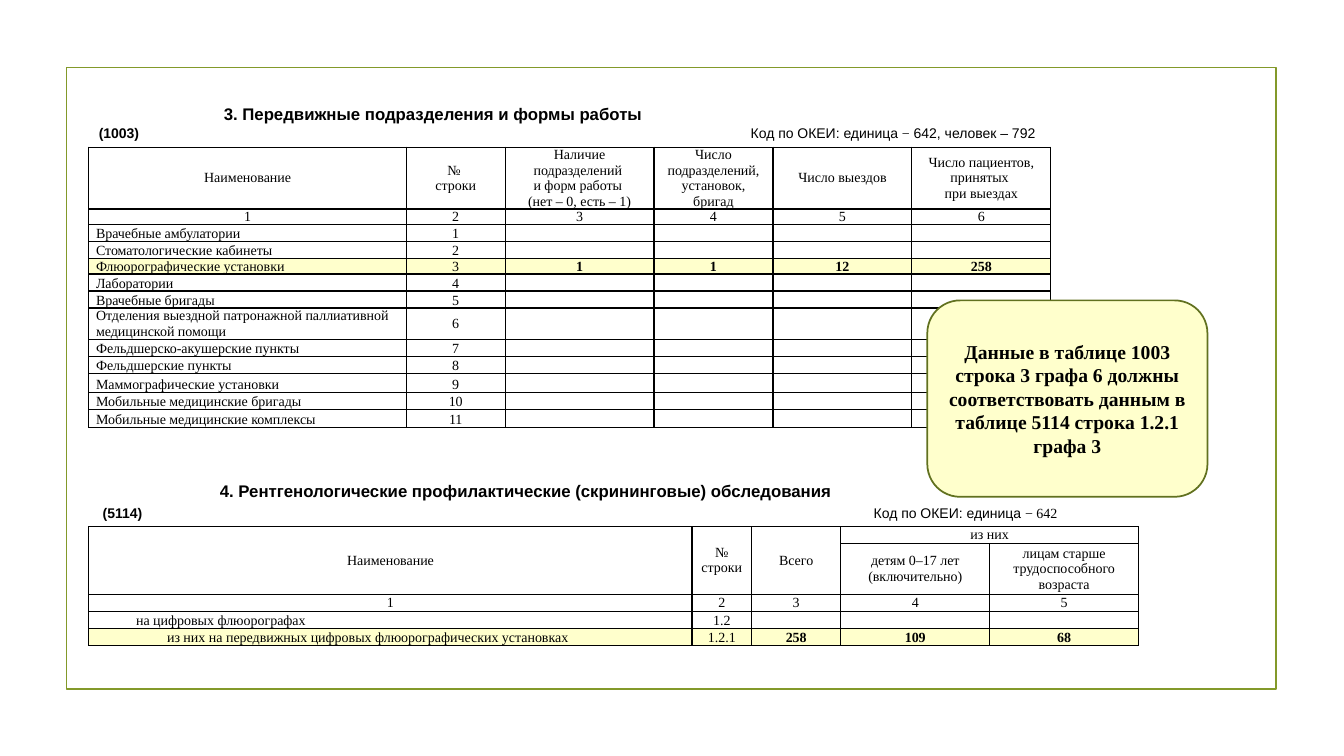
from lxml import etree
from pptx import Presentation
from pptx import util as u
from pptx.dml import color
from pptx.enum import shapes, text
from pptx.oxml import ns

COLORS = {"ink": "000000", "frame": "83992A", "highlight": "FFFFCC", "outline": "61711F"}
SERIF, SANS = "Times New Roman", "Arial"

UNITS = {
    "title": "3. Передвижные подразделения и формы работы",
    "code": "(1003)",
    "measure": [("Код по ОКЕИ: единица ", SANS), ("−", SERIF), (" 642, человек – 792", SANS)],
    "columns": [8, 2.49, 3.75, 3, 3.5, 3.5],
    "heights": [1.55] + [0.39] * 6 + [0.79, 0.39, 0.39, 0.47, 0.39, 0.47],
    "header": [["Наименование", "№ \vстроки",
                "Наличие подразделений \nи форм работы \n(нет – 0, есть – 1)",
                "Число\vподразделений, установок, бригад", "Число выездов",
                "Число пациентов, принятых \vпри выездах"]],
    "names": ["Врачебные амбулатории", "Стоматологические кабинеты",
              "Флюорографические установки", "Лаборатории", "Врачебные бригады",
              "Отделения выездной патронажной паллиативной медицинской помощи",
              "Фельдшерско-акушерские пункты", "Фельдшерские пункты",
              "Маммографические установки", "Мобильные медицинские бригады",
              "Мобильные медицинские комплексы"],
    "highlight": 4,
    "values": ["1", "1", "12", "258"],
}
SCREENING = {
    "title": "4. Рентгенологические профилактические (скрининговые) обследования",
    "code": "(5114)",
    "measure": [("Код по ОКЕИ: единица ", SANS), ("− 642", SERIF)],
    "columns": [15.2, 1.5, 2.25, 3.75, 3.75],
    "heights": [0.42, 1.28, 0.41, 0.43, 0.43],
    "header": [["Наименование", "№ строки", "Всего", "из них", ""],
               ["", "", "", "детям 0–17 лет\v(включительно)",
                "лицам старше трудоспособного возраста"]],
    "names": ["на цифровых флюорографах",
              "из них на передвижных цифровых флюорографических установках"],
    "numbers": ["1.2", "1.2.1"],
    "indents": [1.19, 1.97],
    "highlight": 4,
    "values": ["258", "109", "68"],
    "merges": [(0, 0, 1, 0), (0, 1, 1, 1), (0, 2, 1, 2), (0, 3, 0, 4)],
}


def rgb(name):
    """Return the named palette colour."""
    return color.RGBColor.from_string(COLORS[name])


def style_run(run, size, family, bold=False):
    """Give a run its size, typeface, weight and ink colour."""
    run.font.size, run.font.name, run.font.bold = u.Pt(size), family, bold
    run.font.color.rgb = rgb("ink")


def outline_cell(cell):
    """Draw a thin line on all four sides of a cell."""
    properties = cell._tc.get_or_add_tcPr()
    for side in ("lnL", "lnR", "lnT", "lnB"):
        line = etree.SubElement(properties, ns.qn(f"a:{side}"), w=str(u.Pt(1)))
        fill = etree.SubElement(line, ns.qn("a:solidFill"))
        etree.SubElement(fill, ns.qn("a:srgbClr"), val=COLORS["ink"])


def fill_cell(cell, words, centred, bold, highlighted, indent=0.18):
    """Write one table cell with its border, fill and text format."""
    outline_cell(cell)
    if highlighted:
        cell.fill.solid()
        cell.fill.fore_color.rgb = rgb("highlight")
    else:
        cell.fill.background()
    cell.margin_left, cell.margin_right = u.Cm(indent), u.Cm(0.18)
    cell.margin_top = cell.margin_bottom = 0
    cell.text_frame.text = words
    for paragraph in cell.text_frame.paragraphs:
        paragraph.alignment = text.PP_ALIGN.CENTER if centred else text.PP_ALIGN.LEFT
        for run in paragraph.runs:
            style_run(run, 10, SERIF, bold)
        if not words:
            etree.SubElement(paragraph._p, ns.qn("a:endParaRPr"), sz="1000")


def table_rows(data):
    """Join header, column numbers and body into full rows."""
    count = len(data["columns"])
    rows = data["header"] + [[str(number + 1) for number in range(count)]]
    numbers = data.get("numbers") or [str(i + 1) for i in range(len(data["names"]))]
    for name, number in zip(data["names"], numbers):
        marked = len(rows) == data["highlight"]
        rows = rows + [[name, number] + (data["values"] if marked else [""] * (count - 2))]
    return rows


def add_form_table(slide, data, left, top):
    """Place a reporting table with its top left corner at the given point."""
    rows, columns, heights = table_rows(data), data["columns"], data["heights"]
    table = slide.shapes.add_table(len(rows), len(columns), u.Cm(left), u.Cm(top),
                                   u.Cm(sum(columns)), u.Cm(sum(heights))).table
    table.first_row = table.horz_banding = False
    for column, width in zip(table.columns, columns):
        column.width = u.Cm(width)
    body = len(data["header"]) + 1
    indents = data.get("indents") or [0.18] * len(data["names"])
    for r, words in enumerate(rows):
        table.rows[r].height = u.Cm(heights[r])
        marked = r == data["highlight"]
        middle = r < body or heights[r] > 0.7
        for c, word in enumerate(words):
            cell = table.cell(r, c)
            label = r >= body and c == 0
            fill_cell(cell, word, not label, marked and c > 1, marked,
                      indents[r - body] if label else 0.18)
            cell.vertical_anchor = text.MSO_ANCHOR.MIDDLE if middle else text.MSO_ANCHOR.BOTTOM
    for top_row, first, bottom_row, last in data.get("merges", []):
        table.cell(top_row, first).merge(table.cell(bottom_row, last))


def add_caption(slide, data, left, top, width, height, title_indent, measure_tab, gap=0):
    """Place a table title above its code and unit of measure."""
    frame = slide.shapes.add_textbox(*map(u.Cm, (left, top, width, height))).text_frame
    frame.word_wrap = True
    frame.vertical_anchor = text.MSO_ANCHOR.MIDDLE
    title, details = frame.paragraphs[0], frame.add_paragraph()
    title.text = data["title"]
    title._p.get_or_add_pPr().set("marL", str(u.Cm(title_indent)))
    style_run(title.runs[0], 12, SANS, True)
    details.space_before = u.Pt(gap)
    tabs = etree.SubElement(details._p.get_or_add_pPr(), ns.qn("a:tabLst"))
    etree.SubElement(tabs, ns.qn("a:tab"), pos=str(u.Cm(measure_tab)), algn="l")
    details.text = data["code"] + "\t"
    for run in details.runs:
        style_run(run, 10, SANS, True)
    for words, family in data["measure"]:
        run = details.add_run()
        run.text = words
        style_run(run, 10, family)


def add_frame(slide, left, top, width, height):
    """Draw the border around the slide content."""
    shape = slide.shapes.add_shape(shapes.MSO_SHAPE.RECTANGLE,
                                   *map(u.Cm, (left, top, width, height)))
    shape.shadow.inherit = False
    shape.fill.background()
    shape.line.color.rgb, shape.line.width = rgb("frame"), u.Pt(1.25)


def add_callout(slide, words, left, top, width, height):
    """Place the rounded note that links the two tables."""
    shape = slide.shapes.add_shape(shapes.MSO_SHAPE.ROUNDED_RECTANGLE,
                                   *map(u.Cm, (left, top, width, height)))
    shape.shadow.inherit = False
    shape.fill.solid()
    shape.fill.fore_color.rgb = rgb("highlight")
    shape.line.color.rgb, shape.line.width = rgb("outline"), u.Pt(1.25)
    shape.text_frame.word_wrap = True
    shape.text_frame.vertical_anchor = text.MSO_ANCHOR.MIDDLE
    shape.text_frame.text = words
    paragraph = shape.text_frame.paragraphs[0]
    paragraph.alignment = text.PP_ALIGN.CENTER
    style_run(paragraph.runs[0], 14, SERIF, True)


def main():
    """Build the slide and save it."""
    presentation = Presentation()
    presentation.slide_width, presentation.slide_height = u.Cm(33.87), u.Cm(19.05)
    slide = presentation.slides.add_slide(presentation.slide_layouts[6])
    add_frame(slide, 1.68, 1.7, 30.48, 15.67)
    add_form_table(slide, UNITS, 2.24, 3.71)
    add_caption(slide, UNITS, 2.24, 2.49, 24.23, 1.19, 3.15, 16.43)
    add_form_table(slide, SCREENING, 2.24, 13.27)
    add_caption(slide, SCREENING, 2.34, 11.99, 26.65, 1.27, 2.95, 19.43, 2)
    add_callout(slide, "Данные в таблице 1003 строка 3 графа 6 должны соответствовать "
                "данным в таблице 5114 строка 1.2.1 графа 3", 23.37, 7.57, 7.06, 4.95)
    presentation.save("out.pptx")


if __name__ == "__main__":
    main()
